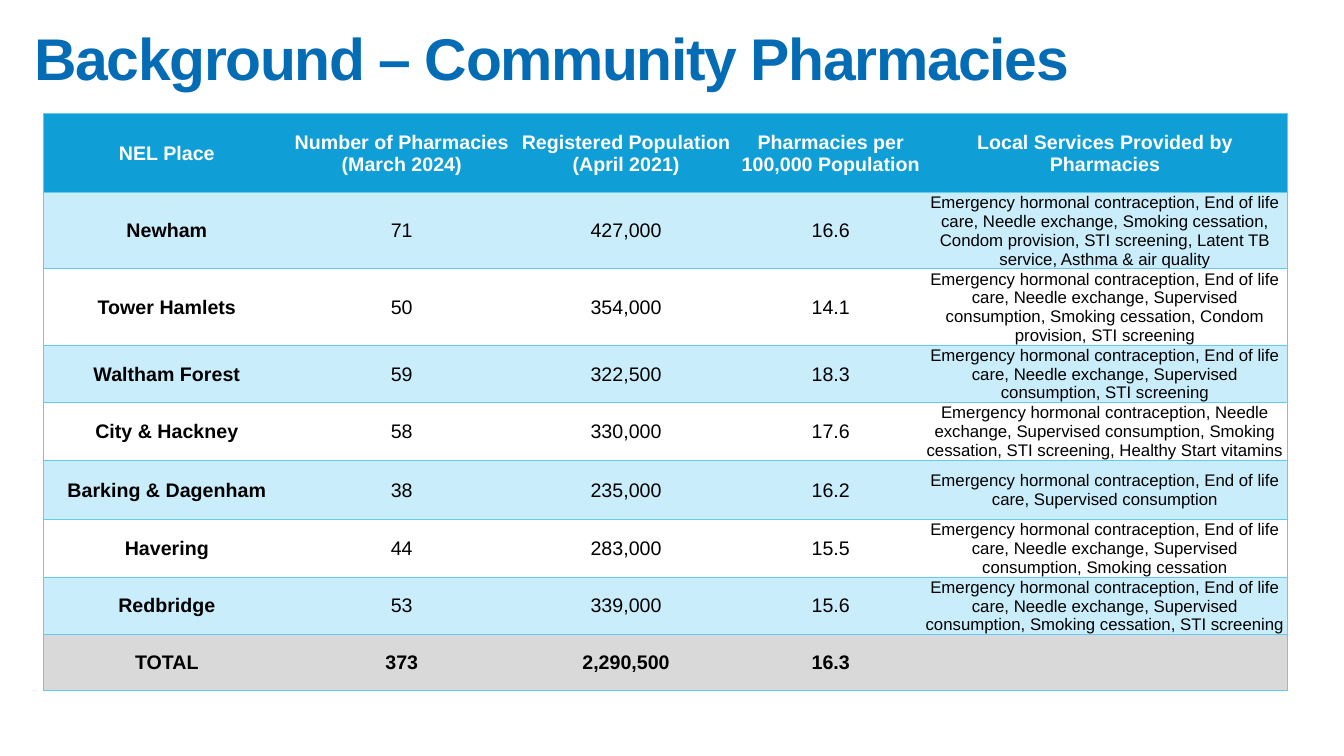
from lxml.etree import SubElement
from pptx import Presentation
from pptx.dml.color import RGBColor
from pptx.enum.text import MSO_ANCHOR as Anchor, PP_ALIGN as Align
from pptx.oxml import parse_xml
from pptx.oxml.ns import nsdecls, qn
from pptx.util import Inches, Pt

# Palette
BLUE, HEADER, BAND, TOTAL, RULE = "046CB4", "0F9ED5", "CAEDFB", "D9D9D9", "61CBF3"
WHITE, BLACK = "FFFFFF", "000000"

# Table grid, in inches
COLUMNS = [2.45, 2.21, 2.24, 1.82, 3.62]
ROWS = [0.79] + [0.56] * 4 + [0.59] + [0.56] * 3

# Content
HEADINGS = ["NEL Place", "Number of Pharmacies\n(March 2024)",
            "Registered Population\n(April 2021)",
            "Pharmacies per 100,000 Population",
            "Local Services Provided by Pharmacies"]
EHC = "Emergency hormonal contraception, "
CARE = EHC + "End of life care, "
NEEDLE = CARE + "Needle exchange, "
SUPERVISED = NEEDLE + "Supervised consumption, "
PLACES = [
    ["Newham", "71", "427,000", "16.6",
     NEEDLE + "Smoking cessation, Condom provision, STI screening, "
     "Latent TB service, Asthma & air quality"],
    ["Tower Hamlets", "50", "354,000", "14.1",
     SUPERVISED + "Smoking cessation, Condom provision, STI screening"],
    ["Waltham Forest", "59", "322,500", "18.3", SUPERVISED + "STI screening"],
    ["City & Hackney", "58", "330,000", "17.6",
     EHC + "Needle exchange, Supervised consumption, Smoking cessation, "
     "STI screening, Healthy Start vitamins"],
    ["Barking & Dagenham", "38", "235,000", "16.2", CARE + "Supervised consumption"],
    ["Havering", "44", "283,000", "15.5", SUPERVISED + "Smoking cessation"],
    ["Redbridge", "53", "339,000", "15.6",
     SUPERVISED + "Smoking cessation, STI screening"],
]
TOTALS = ["TOTAL", "373", "2,290,500", "16.3", ""]


def rgb(hex_code):
    return RGBColor.from_string(hex_code)


def apply(target, values):
    for name, value in values.items():
        setattr(target, name, value)


def format_runs(paragraph, size, bold, color):
    for run in paragraph.runs:
        apply(run.font, {"name": "Arial", "size": Pt(size), "bold": bold})
        run.font.color.rgb = rgb(color)


def add_borders(cell, ruled_sides):
    """Rule the given sides and blank out the others."""
    properties = cell._tc.get_or_add_tcPr()
    for position, side in enumerate("LRTB"):
        line = parse_xml(f'<a:ln{side} {nsdecls("a")} w="{Pt(0.5)}"/>')
        if side in ruled_sides:
            fill = SubElement(line, qn("a:solidFill"))
            SubElement(fill, qn("a:srgbClr"), val=RULE)
        else:
            SubElement(line, qn("a:noFill"))
        properties.insert(position, line)


def fill_cell(cell, text, fill, borders, **font):
    apply(cell, {"margin_left": Inches(0.01), "margin_right": Inches(0.01),
                 "margin_top": Inches(0.01), "margin_bottom": 0,
                 "vertical_anchor": Anchor.MIDDLE})
    paragraph = cell.text_frame.paragraphs[0]
    paragraph.alignment = Align.CENTER
    if text:
        paragraph.text = text
        format_runs(paragraph, **font)
    if fill:
        cell.fill.solid()
        cell.fill.fore_color.rgb = rgb(fill)
    else:
        cell.fill.background()
    add_borders(cell, borders)


def add_title(slide, text):
    title = slide.shapes.title
    apply(title, {"left": Inches(0.24), "top": Inches(0.11),
                  "width": Inches(11.01), "height": Inches(1.01)})
    apply(title.text_frame, {"text": text, "word_wrap": True,
                             "vertical_anchor": Anchor.MIDDLE})
    heading = title.text_frame.paragraphs[0]
    apply(heading, {"alignment": Align.LEFT, "line_spacing": 0.9})
    format_runs(heading, size=42, bold=True, color=BLUE)
    heading.runs[0].font._element.set("spc", "-100")


def add_pharmacy_table(slide):
    content = [HEADINGS, *PLACES, TOTALS]
    last_row, last_column = len(ROWS) - 1, len(COLUMNS) - 1
    table = slide.shapes.add_table(
        len(ROWS), len(COLUMNS), Inches(0.43), Inches(1.12),
        Inches(sum(COLUMNS)), Inches(sum(ROWS))).table
    apply(table, {"first_row": False, "horz_banding": False})
    for column, width in zip(table.columns, COLUMNS):
        column.width = Inches(width)
    for row, height in zip(table.rows, ROWS):
        row.height = Inches(height)

    for r, texts in enumerate(content):
        summary = r in (0, last_row)
        fill = {0: HEADER, last_row: TOTAL}.get(r, BAND if r % 2 else None)
        for c, text in enumerate(texts):
            borders = "TB" + {0: "L", last_column: "R"}.get(c, "")
            fill_cell(table.cell(r, c), text, fill, borders,
                      size=12 if c == last_column and not summary else 14,
                      bold=summary or c == 0,
                      color=BLACK if r else WHITE)


def main():
    deck = Presentation()
    apply(deck, {"slide_width": Inches(13.33), "slide_height": Inches(7.5)})
    slide = deck.slides.add_slide(deck.slide_layouts[5])
    add_title(slide, "Background – Community Pharmacies")
    add_pharmacy_table(slide)
    deck.save("out.pptx")


if __name__ == "__main__":
    main()
